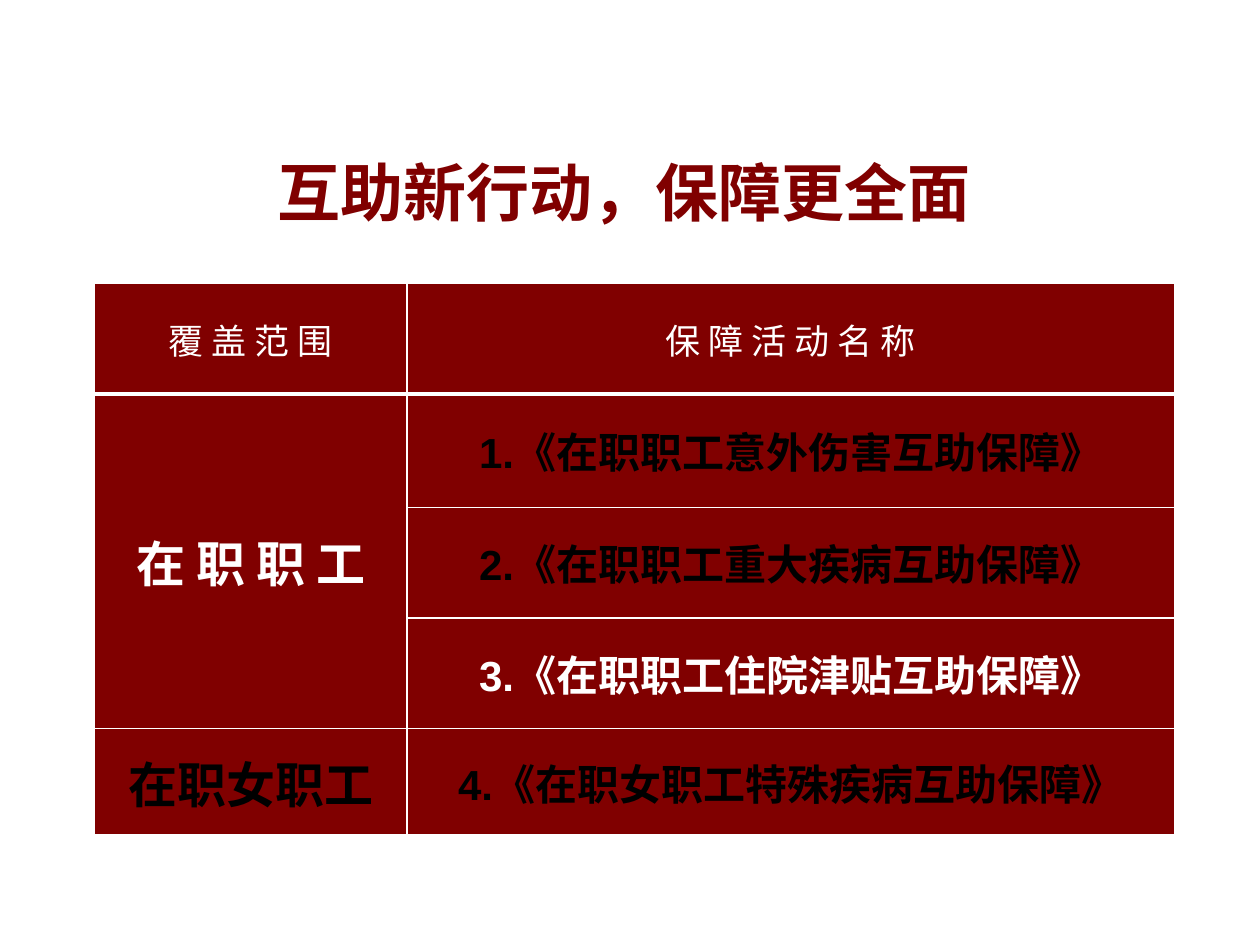
from lxml import etree
from pptx import Presentation
from pptx.dml.color import RGBColor
from pptx.enum.text import MSO_ANCHOR, PP_ALIGN
from pptx.oxml.ns import qn
from pptx.util import Inches, Pt

MIDDLE = MSO_ANCHOR.MIDDLE
CENTER = PP_ALIGN.CENTER
TITLE_ONLY = 5
COLORS = {"maroon": "800000", "white": "FFFFFF", "black": "000000"}
LATIN, HAN = "Arial", "Noto Sans CJK SC"

COLUMNS = [0.248, 0.609]
ROWS = [0.117, 0.12, 0.117, 0.117, 0.113]
HEADINGS = ["覆 盖 范 围", "保 障 活 动 名 称"]
GROUPS = [
    ("在 职 职 工", "white", [
        ("1.《在职职工意外伤害互助保障》", "black"),
        ("2.《在职职工重大疾病互助保障》", "black"),
        ("3.《在职职工住院津贴互助保障》", "white"),
    ]),
    ("在职女职工", "black", [
        ("4.《在职女职工特殊疾病互助保障》", "black"),
    ]),
]


class SlideBuilder:
    def __init__(self, deck):
        self.width, self.height = deck.slide_width, deck.slide_height
        self.page = deck.slides.add_slide(deck.slide_layouts[TITLE_ONLY])

    def across(self, share):
        return round(self.width * share)

    def down(self, share):
        return round(self.height * share)

    def set_text(self, frame, text, size, color, bold, latin=LATIN):
        frame.text = text
        para = frame.paragraphs[0]
        para.alignment = CENTER
        span = para.runs[0]
        span.font.size = Pt(size)
        span.font.bold = bold
        span.font.name = latin
        span.font.color.rgb = RGBColor.from_string(COLORS[color])
        etree.SubElement(span.font._element, qn("a:ea"), typeface=HAN)
        return para

    def title(self, text, left, top, width, height):
        box = self.page.shapes.title
        box.left, box.width = self.across(left), self.across(width)
        box.top, box.height = self.down(top), self.down(height)
        para = self.set_text(box.text_frame, text, 36, "maroon", True, HAN)
        para.line_spacing = 1.2
        box.text_frame.vertical_anchor = MIDDLE

    def table(self, left, top, columns, rows):
        frame = self.page.shapes.add_table(
            len(rows), len(columns), self.across(left), self.down(top),
            self.across(sum(columns)), self.down(sum(rows)))
        table = frame.table
        table.horz_banding = False
        for column, share in zip(table.columns, columns):
            column.width = self.across(share)
        for row, share in zip(table.rows, rows):
            row.height = self.down(share)
        for index, row in enumerate(table.rows):
            for cell in row.cells:
                self.style_cell(cell, 3 if index == 0 else 1)
        return table

    def style_cell(self, cell, bottom):
        properties = cell._tc.get_or_add_tcPr()
        for side, points in zip("LRTB", (1, 1, 1, bottom)):
            line = etree.SubElement(properties, qn(f"a:ln{side}"), w=str(Pt(points)))
            fill = etree.SubElement(line, qn("a:solidFill"))
            etree.SubElement(fill, qn("a:srgbClr"), val=COLORS["white"])
        cell.fill.solid()
        cell.fill.fore_color.rgb = RGBColor.from_string(COLORS["maroon"])

    def cell(self, cell, text, size, color, bold=True):
        self.set_text(cell.text_frame, text, size, color, bold)
        cell.vertical_anchor = MIDDLE


def main():
    deck = Presentation()
    deck.slide_width, deck.slide_height = Inches(10), Inches(7.5)
    builder = SlideBuilder(deck)
    builder.title("互助新行动，保障更全面", 0.067, 0.143, 0.856, 0.104)
    table = builder.table(0.075, 0.3, COLUMNS, ROWS)
    for column, heading in enumerate(HEADINGS):
        builder.cell(table.cell(0, column), heading, 20, "white", False)
    row = 1
    for scope, color, plans in GROUPS:
        first = table.cell(row, 0)
        if len(plans) > 1:
            first.merge(table.cell(row + len(plans) - 1, 0))
        builder.cell(first, scope, 28, color)
        for plan, plan_color in plans:
            builder.cell(table.cell(row, 1), plan, 24, plan_color)
            row += 1
    deck.save("out.pptx")


if __name__ == "__main__":
    main()
